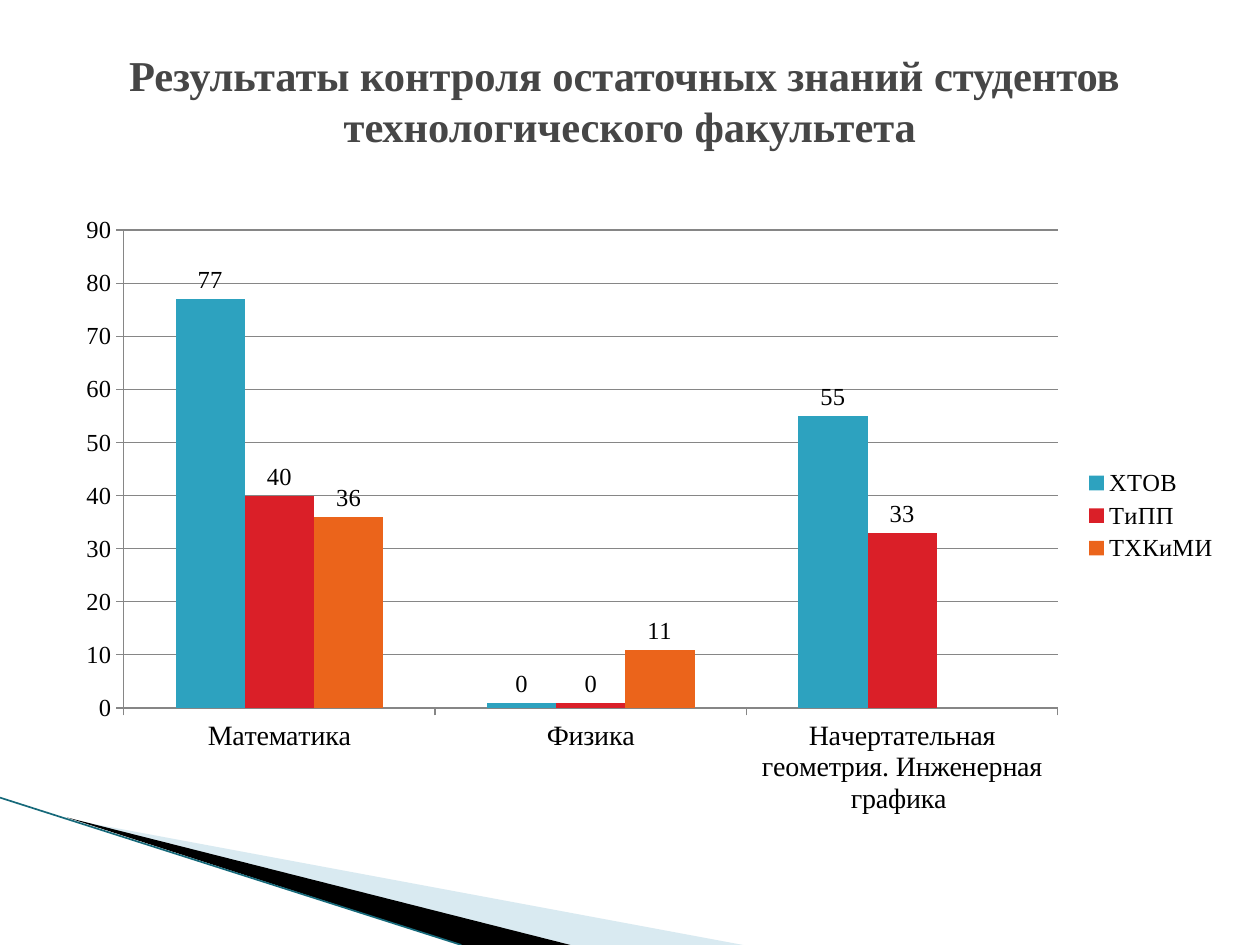
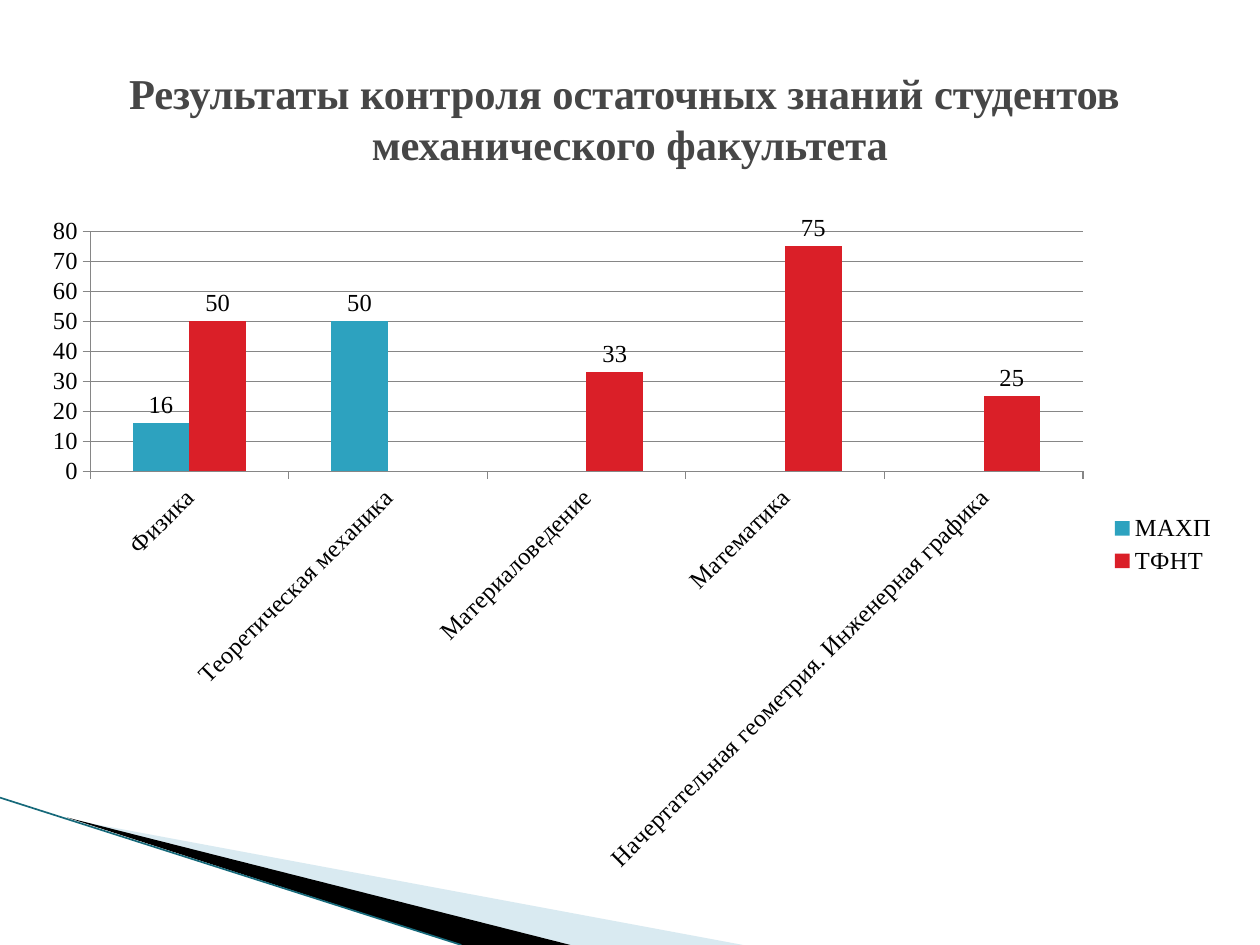
from lxml import etree
from pptx import Presentation
from pptx.chart.data import CategoryChartData
from pptx.dml.color import RGBColor
from pptx.enum.chart import XL_CHART_TYPE, XL_LABEL_POSITION, XL_LEGEND_POSITION, XL_TICK_MARK
from pptx.enum.shapes import MSO_CONNECTOR
from pptx.enum.text import MSO_ANCHOR, PP_ALIGN
from pptx.oxml.ns import qn
from pptx.util import Cm, Pt

COLUMNS = XL_CHART_TYPE.COLUMN_CLUSTERED
ABOVE = XL_LABEL_POSITION.OUTSIDE_END
RIGHT = XL_LEGEND_POSITION.RIGHT
OUTSIDE = XL_TICK_MARK.OUTSIDE
STRAIGHT = MSO_CONNECTOR.STRAIGHT
MIDDLE = MSO_ANCHOR.MIDDLE
CENTER = PP_ALIGN.CENTER

# Content: boxes are left, top, width, height in cm
SLIDES = [
    {
        "title": "Результаты контроля остаточных знаний студентов \vтехнологического факультета",
        "middle": 2.02,
        "box": (1.27, 4.11, 23.55, 12.57),
        "top": 90, "size": 16, "turn": 0,
        "cats": ["Математика", "Физика", "Начертательная геометрия. Инженерная графика "],
        "series": [("ХТОВ", (77, 1, 55)), ("ТиПП", (40, 1, 33)), ("ТХКиМИ", (36, 11, None))],
        "labels": {(0, 1): "0", (1, 1): "0"},
    },
    {
        "title": "Результаты контроля остаточных знаний студентов \vмеханического факультета",
        "middle": 2.37,
        "box": (0.58, 4.11, 24.21, 13.74),
        "top": 80, "size": 14, "turn": -45,
        "cats": ["Физика", "Теоретическая механика", "Материаловедение", "Математика",
                 "Начертательная геометрия. Инженерная графика"],
        "series": [("МАХП", (16, 50, None, None, None)), ("ТФНТ", (50, None, 33, 75, 25))],
        "labels": {},
    },
]

# Shared look
FACE = "Times New Roman"
INK, GREY, RULE = "000000", "464646", "868686"
BARS = ["2DA2BF", "DA1F28", "EB641B"]
WIDE, HIGH = 25.4, 19.05
WEDGES = [
    ("A0CBDC", 40, [(1.4, 16.52), (14.98, HIGH), (11.5, HIGH)]),
    ("000000", 100, [(1.35, 16.48), (11.5, HIGH), (9.3, HIGH)]),
]
EDGE = ("16697A", [(0, 16.08), (9.3, HIGH)])


def rgb(code):
    return RGBColor.from_string(code)


def style(font, size=14, color=INK, bold=False):
    font.name, font.size, font.bold = FACE, Pt(size), bold
    font.color.rgb = rgb(color)


def write(frame, text, align=CENTER, lead=None, **form):
    para = frame.paragraphs[0]
    para.text = text
    para.alignment = align
    if lead:
        para.line_spacing = Pt(lead)
    for run in para.runs:
        style(run.font, **form)


def add_title(slide, text, middle):
    high = 2.4
    box = slide.shapes.add_textbox(Cm(1.27), Cm(middle - high / 2), Cm(22.86), Cm(high))
    frame = box.text_frame
    frame.word_wrap = True
    frame.vertical_anchor = MIDDLE
    write(frame, text, lead=29.2, size=24.3, color=GREY, bold=True)


def add_corner(slide):
    for color, alpha, dots in WEDGES:
        first, *rest = [(Cm(x), Cm(y)) for x, y in dots]
        pen = slide.shapes.build_freeform(*first)
        pen.add_line_segments(rest)
        wedge = pen.convert_to_shape()
        wedge.shadow.inherit = False
        wedge.fill.solid()
        wedge.fill.fore_color.rgb = rgb(color)
        wedge.line.fill.background()
        if alpha < 100:
            tint = wedge._element.spPr.find(".//" + qn("a:srgbClr"))
            etree.SubElement(tint, qn("a:alpha")).set("val", str(alpha * 1000))
    color, ends = EDGE
    edge = slide.shapes.add_connector(STRAIGHT, *[Cm(n) for dot in ends for n in dot])
    edge.line.color.rgb = rgb(color)
    edge.line.width = Pt(0.95)
    etree.SubElement(edge._element.spPr, qn("a:effectLst"))


def add_bars(slide, item):
    data = CategoryChartData(number_format="#,##0")
    data.categories = item["cats"]
    for name, vals in item["series"]:
        data.add_series(name, vals)
    spot = [Cm(n) for n in item["box"]]
    chart = slide.shapes.add_chart(COLUMNS, *spot, data).chart
    chart.has_title = False
    style(chart.font)

    # Legend
    chart.has_legend = True
    chart.legend.position = RIGHT
    chart.legend.include_in_layout = False
    style(chart.legend.font)

    # Axes
    cat, val = chart.category_axis, chart.value_axis
    for axis, size in ((cat, item["size"]), (val, 14)):
        style(axis.tick_labels.font, size)
        axis.major_tick_mark = OUTSIDE
        axis.format.line.color.rgb = rgb(RULE)
    if item["turn"]:
        body = cat._element.find(".//" + qn("a:bodyPr"))
        body.set("rot", str(item["turn"] * 60000))
    val.minimum_scale, val.maximum_scale, val.major_unit = 0, item["top"], 10
    val.has_major_gridlines = True
    val.major_gridlines.format.line.color.rgb = rgb(RULE)

    # Bars and their labels
    plot = chart.plots[0]
    plot.vary_by_categories = False
    plot.gap_width, plot.overlap = 150, 0
    for bar, color in zip(plot.series, BARS):
        bar.format.fill.solid()
        bar.format.fill.fore_color.rgb = rgb(color)
        bar.invert_if_negative = False
        tags = bar.data_labels
        tags.show_value = True
        tags.position = ABOVE
        style(tags.font)
    for (row, col), text in item["labels"].items():
        tag = plot.series[row].points[col].data_label
        write(tag.text_frame, text)
        tag.position = ABOVE


def main():
    deck = Presentation()
    deck.slide_width, deck.slide_height = Cm(WIDE), Cm(HIGH)
    for item in SLIDES:
        slide = deck.slides.add_slide(deck.slide_layouts[6])
        add_corner(slide)
        add_bars(slide, item)
        add_title(slide, item["title"], item["middle"])
    deck.save("out.pptx")


if __name__ == "__main__":
    main()
